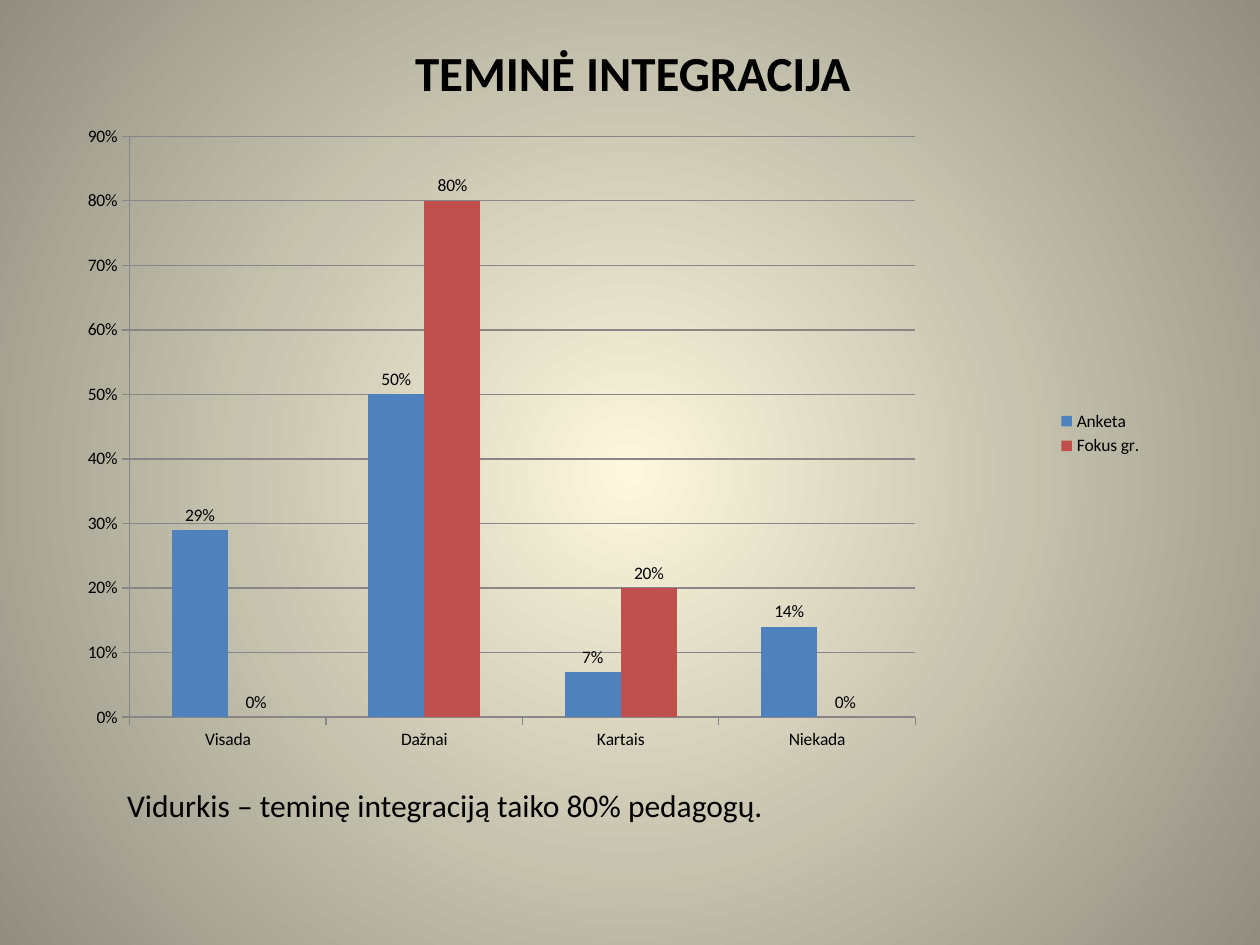
import pptx
import pptx.util
import pptx.oxml
import pptx.oxml.ns
import pptx.dml.color
import pptx.chart.data
import pptx.enum.chart
import pptx.enum.text
from lxml import etree

Pt = pptx.util.Pt
qn = pptx.oxml.ns.qn
FONT = "Calibri"
BLACK, GREY = "000000", "878787"


def color(code):
    return pptx.dml.color.RGBColor.from_string(code)


def style(font, size, bold=False, code=BLACK):
    font.name, font.size, font.bold = FONT, Pt(size), bold
    font.color.rgb = color(code)


def write(frame, text, size=18, bold=False, code=BLACK, align="LEFT", anchor="TOP"):
    frame.word_wrap = True
    frame.vertical_anchor = getattr(pptx.enum.text.MSO_ANCHOR, anchor)
    para = frame.paragraphs[0]
    para.alignment = getattr(pptx.enum.text.PP_ALIGN, align)
    run = para.add_run()
    run.text = text
    style(run.font, size, bold, code)


def paint(slide, inner, outer):
    """Radial gradient from the middle of the slide."""
    fill = slide.background.fill
    fill.gradient()
    for stop, place, code in zip(fill.gradient_stops, (0, 1), (inner, outer)):
        stop.color.rgb = color(code)
        stop.position = place
    grad = slide.element.find(".//" + qn("a:gradFill"))
    grad.remove(grad.find(qn("a:lin")))
    ring = etree.SubElement(grad, qn("a:path"), path="circle")
    etree.SubElement(ring, qn("a:fillToRect"), l="50000", t="50000", r="50000", b="50000")


def head(slide, box, text):
    title = slide.shapes.title
    title.left, title.top, title.width, title.height = map(Pt, box)
    # The deep lower margin lifts the line above the middle
    title.text_frame.margin_bottom = Pt(37)
    write(title.text_frame, text, size=28, bold=True, align="CENTER", anchor="MIDDLE")


def place(chart, x, y, w, h):
    """Fix the inner plot area as shares of the chart."""
    area = chart.element.find(".//" + qn("c:plotArea"))
    old = area.find(qn("c:layout"))
    if old is not None:
        area.remove(old)
    layout = etree.Element(qn("c:layout"))
    area.insert(0, layout)
    manual = etree.SubElement(layout, qn("c:manualLayout"))
    parts = [("layoutTarget", "inner"), ("xMode", "edge"), ("yMode", "edge"),
             ("x", x), ("y", y), ("w", w), ("h", h)]
    for name, val in parts:
        etree.SubElement(manual, qn("c:" + name), val=str(val))


def bars(slide, box, cats, rows):
    enum = pptx.enum.chart
    data = pptx.chart.data.CategoryChartData(number_format="0%")
    data.categories = cats
    for name, vals, _ in rows:
        data.add_series(name, vals)
    chart = slide.shapes.add_chart(
        enum.XL_CHART_TYPE.COLUMN_CLUSTERED, *map(Pt, box), data).chart
    style(chart.font, 10)
    chart.has_title = False
    place(chart, 0.06, 0.06, 0.72, 0.86)

    # Legend
    chart.has_legend = True
    chart.legend.position = enum.XL_LEGEND_POSITION.RIGHT
    chart.legend.include_in_layout = False

    # Axes
    for axis in (chart.category_axis, chart.value_axis):
        axis.major_tick_mark = enum.XL_TICK_MARK.OUTSIDE
        axis.minor_tick_mark = enum.XL_TICK_MARK.NONE
        axis.format.line.color.rgb = color(GREY)
    axis = chart.value_axis
    axis.minimum_scale, axis.maximum_scale, axis.major_unit = 0, 0.9, 0.1
    axis.tick_labels.number_format = "0%"
    axis.tick_labels.number_format_is_linked = False
    axis.has_major_gridlines = True
    axis.major_gridlines.format.line.color.rgb = color(GREY)

    # Columns and their labels
    plot = chart.plots[0]
    plot.gap_width, plot.overlap, plot.vary_by_categories = 150, 0, False
    for series, (_, _, code) in zip(plot.series, rows):
        series.format.fill.solid()
        series.format.fill.fore_color.rgb = color(code)
        labels = series.data_labels
        labels.show_value = True
        labels.number_format = "0%"
        labels.number_format_is_linked = False
        labels.position = enum.XL_LABEL_POSITION.OUTSIDE_END


def note(slide, box, text):
    frame = slide.shapes.add_textbox(*map(Pt, box)).text_frame
    write(frame, text)
    frame.auto_size = pptx.enum.text.MSO_AUTO_SIZE.SHAPE_TO_FIT_TEXT


def main():
    deck = pptx.Presentation()
    deck.slide_width, deck.slide_height = Pt(720), Pt(540)
    slide = deck.slides.add_slide(deck.slide_layouts[5])
    paint(slide, "FCF7DD", "918E81")
    head(slide, (55.5, 9.5, 612, 96.5), "TEMINĖ INTEGRACIJA")
    bars(slide, (36.75, 54.75, 623.5, 386),
         ["Visada", "Dažnai", "Kartais", "Niekada"],
         [("Anketa", (0.29, 0.5, 0.07, 0.14), "4F81BD"),
          ("Fokus gr.", (0, 0.8, 0.2, 0), "C0504D")])
    note(slide, (65.5, 445.75, 527, 29), "Vidurkis – teminę integraciją taiko 80% pedagogų.")
    deck.save("out.pptx")


if __name__ == "__main__":
    main()
